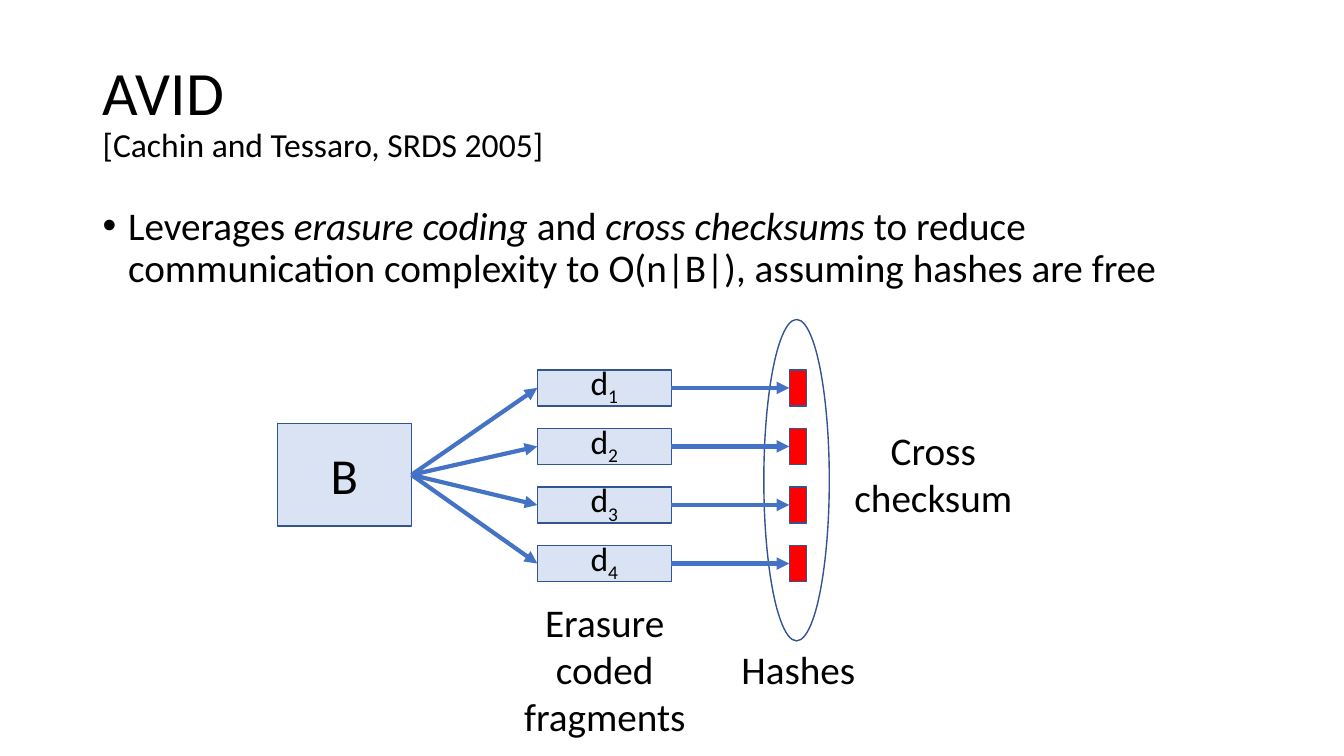
from lxml import etree
from pptx import Presentation, util as u
from pptx.dml.color import RGBColor
from pptx.enum import shapes, text
from pptx.oxml.ns import qn

BLACK, PALE, NAVY, BLUE, RED = "000000", "DAE3F3", "325491", "4472C4", "FF0000"


def color(value):
    return RGBColor.from_string(value)


def write(box, runs, align=text.PP_ALIGN.CENTER, anchor=text.MSO_ANCHOR.TOP):
    box.text_frame.word_wrap = True
    box.text_frame.vertical_anchor = anchor
    para = box.text_frame.paragraphs[0]
    para.alignment = align
    for words, size, italic in runs:
        if words == "\n":
            para.add_line_break()
            continue
        span = para.add_run()
        span.text = words
        span.font.name = "Calibri"
        span.font.size = u.Pt(size)
        span.font.italic = italic
        span.font.color.rgb = color(BLACK)
    return para


deck = Presentation()
deck.slide_width, deck.slide_height = u.Cm(33.87), u.Cm(19.05)
page = deck.slides.add_slide(deck.slide_layouts[6])

title = page.shapes.add_textbox(u.Cm(2.34), u.Cm(1.02), u.Cm(29.21), u.Cm(3.68))
para = write(title, [("AVID", 44, False), ("\n", 44, False),
                     ("[Cachin and Tessaro, SRDS 2005]", 24, False)],
             text.PP_ALIGN.LEFT, text.MSO_ANCHOR.MIDDLE)
para.line_spacing = 0.9

body = page.shapes.add_textbox(u.Cm(2.34), u.Cm(5.08), u.Cm(29.21), u.Cm(3.4))
para = write(body, [
    ("Leverages ", 28, False), ("erasure coding ", 28, True),
    ("and ", 28, False), ("cross checksums ", 28, True),
    ("to reduce communication complexity to O(n|B|), assuming hashes are free", 28, False),
], text.PP_ALIGN.LEFT)
para.line_spacing = 0.9
para.space_before = u.Pt(10)
bullet = para._p.get_or_add_pPr()
bullet.set("marL", str(u.Cm(0.64)))
bullet.set("indent", str(u.Cm(-0.64)))
etree.SubElement(bullet, qn("a:buFont")).set("typeface", "Arial")
etree.SubElement(bullet, qn("a:buChar")).set("char", "•")

RECT, OVAL = shapes.MSO_SHAPE.RECTANGLE, shapes.MSO_SHAPE.OVAL
rows = [9.32 + 1.475 * row for row in range(4)]
outlines = [(RECT, 6.99, 10.67, 3.38, 2.59, PALE)]
outlines += [(RECT, 13.54, top, 3.38, 0.91, PALE) for top in rows]
outlines += [(RECT, 19.89, top, 0.43, 0.91, RED) for top in rows]
outlines += [(OVAL, 19.25, 8.05, 1.65, 8.1, None)]
drawn = []
for kind, left, top, width, height, fill in outlines:
    shape = page.shapes.add_shape(kind, u.Cm(left), u.Cm(top), u.Cm(width), u.Cm(height))
    shape.shadow.inherit = False
    if fill:
        shape.fill.solid()
        shape.fill.fore_color.rgb = color(fill)
    else:
        shape.fill.background()
    shape.line.color.rgb = color(NAVY)
    shape.line.width = u.Pt(1)
    drawn.append(shape)
block, fragments, hashes = drawn[0], drawn[1:5], drawn[5:9]

write(block, [("B", 36, False)], anchor=text.MSO_ANCHOR.MIDDLE)
for number, fragment in enumerate(fragments, 1):
    frame = fragment.text_frame
    frame.margin_top, frame.margin_bottom = u.Cm(0), u.Cm(0.15)
    para = write(fragment, [("d", 24, False), (str(number), 24, False)],
                 anchor=text.MSO_ANCHOR.MIDDLE)
    para.runs[1].font._element.set("baseline", "-25000")

arrows = [(block, fragment) for fragment in fragments] + list(zip(fragments, hashes))
for source, target in arrows:
    arrow = page.shapes.add_connector(shapes.MSO_CONNECTOR.STRAIGHT, 0, 0, 0, 0)
    arrow.begin_connect(source, 3)
    arrow.end_connect(target, 1)
    arrow.line.color.rgb = color(BLUE)
    arrow.line.width = u.Pt(3)
    etree.SubElement(arrow.line._get_or_add_ln(), qn("a:tailEnd")).set("type", "triangle")
    etree.SubElement(arrow._element.spPr, qn("a:effectLst"))

captions = [
    ("Erasure coded fragments", 12.93, 14.94, 3.84),
    ("Hashes", 17.81, 16.13, 1.45),
    ("Cross checksum", 21.21, 10.62, 2.64),
]
for words, left, top, height in captions:
    caption = page.shapes.add_textbox(u.Cm(left), u.Cm(top), u.Cm(4.62), u.Cm(height))
    write(caption, [(words, 28, False)])

deck.save("out.pptx")
